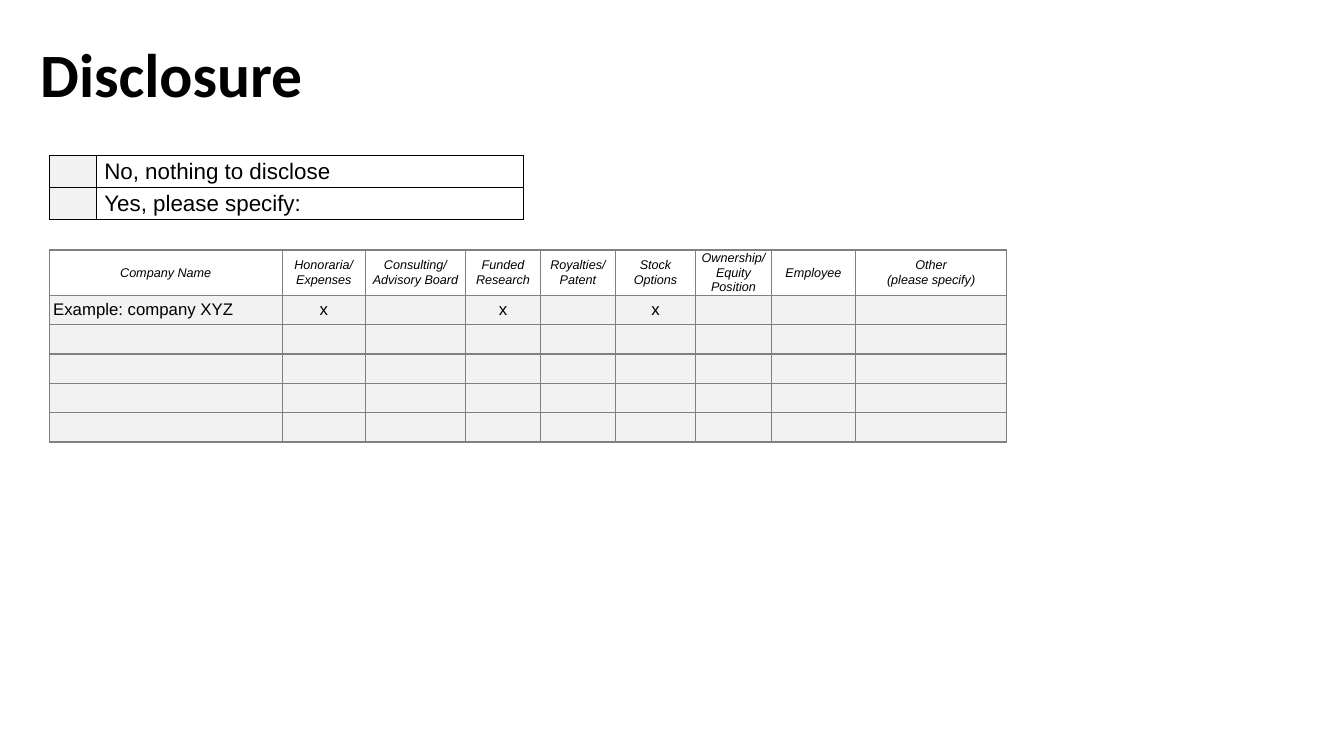
import pptx
import pptx.dml.color
import pptx.enum.text
import pptx.oxml.ns
import pptx.util
from lxml import etree

Cm = pptx.util.Cm
Pt = pptx.util.Pt
RGB = pptx.dml.color.RGBColor.from_string
qn = pptx.oxml.ns.qn
ALIGN = pptx.enum.text.PP_ALIGN
MIDDLE = pptx.enum.text.MSO_ANCHOR.MIDDLE
TOP = pptx.enum.text.MSO_ANCHOR.TOP
COLORS = {"text": "000000", "entry": "F2F2F2", "choice_line": "000000", "grid_line": "808080"}


def add_plain_table(left, top, widths, heights, line):
    """Add a table without banding, every cell bordered in the given colour."""
    frame = s.shapes.add_table(len(heights), len(widths), left, top, sum(widths), sum(heights))
    table = frame.table
    table.first_row = table.horz_banding = False
    for column, width in zip(table.columns, widths):
        column.width = width
    for row, height in zip(table.rows, heights):
        row.height = height
    for cell in table.iter_cells():
        tc_pr = cell._tc.get_or_add_tcPr()
        for side in ("lnL", "lnR", "lnT", "lnB"):
            ln = etree.SubElement(tc_pr, qn(f"a:{side}"), w=str(Pt(1)))
            fill = etree.SubElement(ln, qn("a:solidFill"))
            etree.SubElement(fill, qn("a:srgbClr"), val=line)
    return table


def fill_cell(cell, text, size, margins, shaded, anchor, align, spacing=1.0, italic=False):
    if shaded:
        cell.fill.solid()
        cell.fill.fore_color.rgb = RGB(COLORS["entry"])
    else:
        cell.fill.background()
    cell.margin_left = cell.margin_right = margins[0]
    cell.margin_top, cell.margin_bottom = margins[1:]
    cell.vertical_anchor = anchor
    tf = cell.text_frame
    tf.text = text
    for p in tf.paragraphs:
        p.alignment = align
        p.line_spacing = spacing
        for r in p.runs:
            for name, value in {"size": Pt(size), "name": "Arial", "italic": italic, "bold": False}.items():
                setattr(r.font, name, value)
            r.font.color.rgb = RGB(COLORS["text"])
        if not p.runs:
            etree.SubElement(p._p, qn("a:endParaRPr"), sz=str(size * 100))


prs = pptx.Presentation()
prs.slide_width, prs.slide_height = Cm(33.87), Cm(19.05)
s = prs.slides.add_slide(prs.slide_layouts[5])

title = s.shapes.title
title.left, title.top, title.width, title.height = Cm(0.76), Cm(0.89), Cm(27.71), Cm(2.13)
tf = title.text_frame
tf.text = "Disclosure"
tf.vertical_anchor = MIDDLE
p = tf.paragraphs[0]
p.alignment = ALIGN.LEFT
p.line_spacing = 0.9
r = p.runs[0]
for name, value in {"size": Pt(44), "name": "Calibri", "bold": True}.items():
    setattr(r.font, name, value)
r.font.color.rgb = RGB(COLORS["text"])

# Disclosure choice
choices = ["No, nothing to disclose", "Yes, please specify:"]
table = add_plain_table(Cm(1.24), Cm(3.91), [Cm(1.19), Cm(10.77)], [Cm(0.81)] * 2, COLORS["choice_line"])
for row, choice in enumerate(choices):
    for col, text in enumerate(["", choice]):
        fill_cell(table.cell(row, col), text, 16, (Cm(0.2), Cm(0.02), 0), col == 0,
                  TOP, ALIGN.LEFT, spacing=1.15)

# Company relationships
headings = ["Company Name", "Honoraria/\nExpenses", "Consulting/ Advisory Board", "Funded Research",
            "Royalties/ Patent", "Stock Options", "Ownership/ Equity Position", "Employee",
            "Other\n(please specify)"]
example = ["Example: company XYZ", "x", "", "x", "", "x", "", "", ""]
blank_rows = [[""] * len(headings) for _ in range(4)]
widths = [Cm(w) for w in (5.87, 2.1, 2.52, 1.89, 1.89, 2.02, 1.91, 2.12, 3.81)]
heights = [Cm(1.14)] + [Cm(0.74)] * 5
table = add_plain_table(Cm(1.24), Cm(6.3), widths, heights, COLORS["grid_line"])
for row, texts in enumerate([headings, example, *blank_rows]):
    header = row == 0
    for col, text in enumerate(texts):
        fill_cell(table.cell(row, col), text, 9 if header else 12, (Cm(0.1), 0, 0), not header,
                  MIDDLE, ALIGN.CENTER if header or col else ALIGN.LEFT, italic=header)

prs.save("out.pptx")
